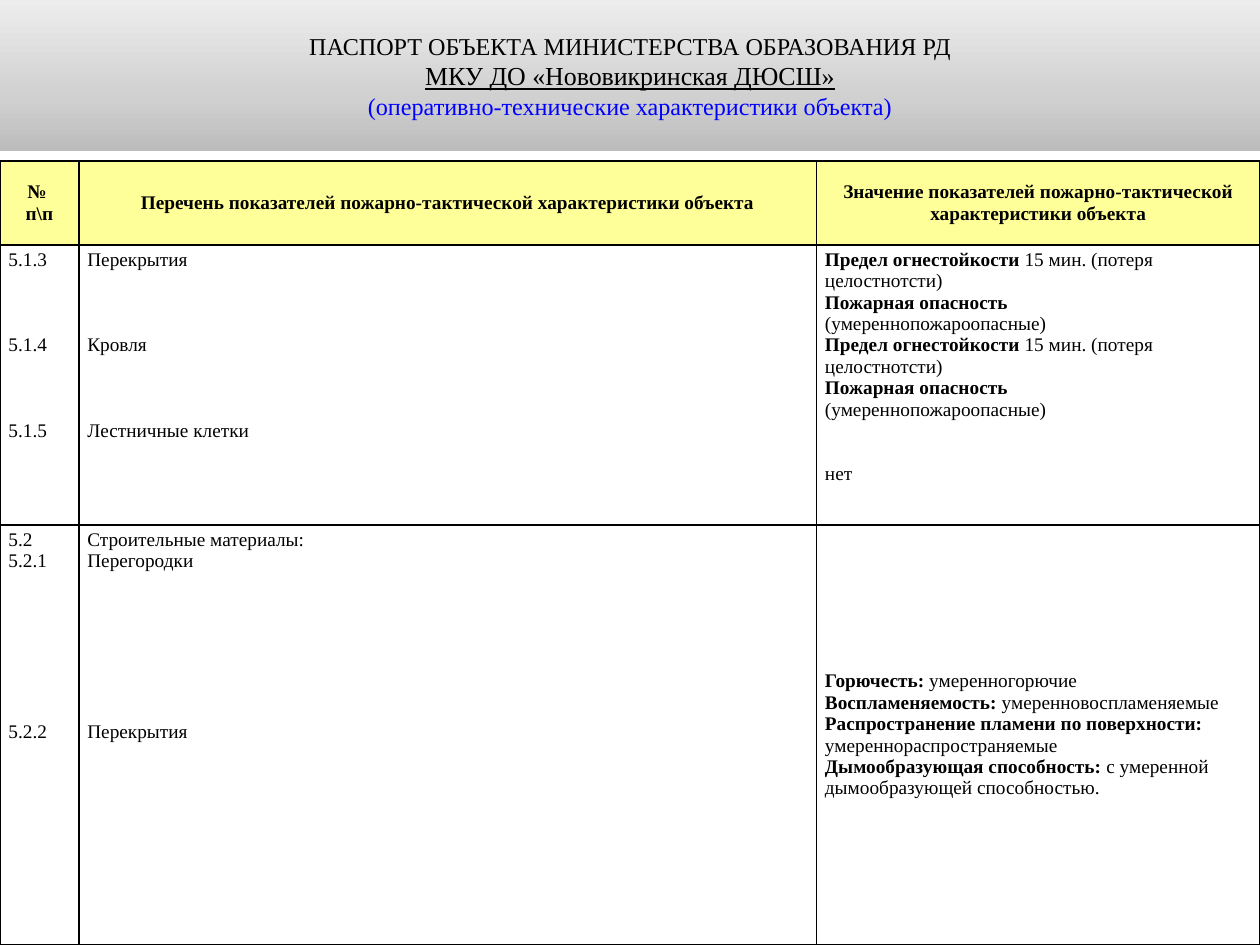
"""Build the fire-safety passport slide with its table of building elements."""
from copy import deepcopy

from lxml import etree
from pptx import Presentation, util as u
from pptx.dml.color import RGBColor
from pptx.enum import shapes, text
from pptx.oxml import ns

FONT = "Times New Roman"
LINE_HEIGHT = 12.2
TITLE = [
    ("ПАСПОРТ ОБЪЕКТА МИНИСТЕРСТВА ОБРАЗОВАНИЯ РД", 13.8, "000000", False),
    ("МКУ ДО «Нововикринская ДЮСШ»", 14.8, "000000", True),
    ("(оперативно-технические характеристики объекта)", 13.8, "0000FF", False),
]
GRADIENT = [(0, "BCBCBC"), (0.35, "D0D0D0"), (1, "EDEDED")]

# Each cell is a list of (lines skipped above, bold text, regular text).
HEADER = [
    [(0, "№ ", ""), (0, "п\\п", "")],
    [(0, "Перечень показателей пожарно-тактической характеристики объекта", "")],
    [(0, "Значение показателей пожарно-тактической характеристики объекта", "")],
]
FIRE_RATING = [
    (0, "Предел огнестойкости ", "15 мин. (потеря целостнотсти)"),
    (0, "Пожарная опасность", ""),
    (0, "", "(умереннопожароопасные)"),
]
STRUCTURES = [
    [(0, "", "5.1.3"), (3, "", "5.1.4"), (3, "", "5.1.5")],
    [(0, "", "Перекрытия"), (3, "", "Кровля"), (3, "", "Лестничные клетки")],
    FIRE_RATING * 2 + [(2, "", "нет")],
]
MATERIALS = [
    [(0, "", "5.2"), (0, "", "5.2.1"), (7, "", "5.2.2")],
    [(0, "", "Строительные материалы:"), (0, "", "Перегородки"), (7, "", "Перекрытия")],
    [
        (0, "Горючесть: ", "умеренногорючие"),
        (0, "Воспламеняемость: ", "умеренновоспламеняемые"),
        (0, "Распространение пламени по поверхности:", ""),
        (0, "", "умереннораспространяемые"),
        (0, "Дымообразующая способность: ", "с умеренной дымообразующей способностью."),
    ],
]
ROWS = [HEADER, STRUCTURES, MATERIALS]
COLUMN_WIDTHS = [1.59, 14.87, 8.94]
ROW_HEIGHTS = [1.69, 5.64, 8.47]
MIDDLE_CELLS = {(0, 0), (0, 1), (0, 2), (2, 2)}


def color(value):
    return RGBColor.from_string(value)


def add_run(paragraph, words, size, value="000000", bold=False, underline=False):
    run = paragraph.add_run()
    run.text = words
    font = run.font
    font.name, font.size, font.bold, font.underline = FONT, u.Pt(size), bold, underline
    font.color.rgb = color(value)


def get_paragraph(frame, index):
    return frame.add_paragraph() if index else frame.paragraphs[0]


def set_margins(box, side, end):
    box.margin_left = box.margin_right = u.Cm(side)
    box.margin_top = box.margin_bottom = u.Cm(end)


def add_borders(cell):
    properties = cell._tc.get_or_add_tcPr()
    for side in ("lnL", "lnR", "lnT", "lnB"):
        line = etree.SubElement(properties, ns.qn("a:" + side), w=str(u.Pt(1)))
        fill = etree.SubElement(line, ns.qn("a:solidFill"))
        etree.SubElement(fill, ns.qn("a:srgbClr"), val="000000")


def fill_cell(cell, content, is_header, is_middle):
    add_borders(cell)
    cell.fill.solid()
    cell.fill.fore_color.rgb = color("FFFF99" if is_header else "FFFFFF")
    set_margins(cell, 0.17, 0.08)
    cell.vertical_anchor = text.MSO_ANCHOR.MIDDLE if is_middle else text.MSO_ANCHOR.TOP
    for index, (skipped, bold_words, words) in enumerate(content):
        paragraph = get_paragraph(cell.text_frame, index)
        paragraph.alignment = text.PP_ALIGN.CENTER if is_header else text.PP_ALIGN.LEFT
        paragraph.space_before = u.Pt(skipped * LINE_HEIGHT)
        if bold_words:
            add_run(paragraph, bold_words, 11, bold=True)
        if words:
            add_run(paragraph, words, 11)


def add_passport_table(slide):
    table = slide.shapes.add_table(
        len(ROWS), len(COLUMN_WIDTHS), 0, u.Cm(3.25),
        u.Cm(sum(COLUMN_WIDTHS)), u.Cm(sum(ROW_HEIGHTS))).table
    table.first_row = table.horz_banding = False
    for column, width in zip(table.columns, COLUMN_WIDTHS):
        column.width = u.Cm(width)
    for row_index, (contents, height) in enumerate(zip(ROWS, ROW_HEIGHTS)):
        table.rows[row_index].height = u.Cm(height)
        for column_index, content in enumerate(contents):
            fill_cell(table.cell(row_index, column_index), content,
                      row_index == 0, (row_index, column_index) in MIDDLE_CELLS)


def add_title_band(slide):
    band = slide.shapes.add_shape(shapes.MSO_SHAPE.RECTANGLE, 0, 0, u.Cm(25.4), u.Cm(3.05))
    band.shadow.inherit = False
    band.line.fill.background()
    band.fill.gradient()
    band.fill.gradient_angle = 90
    first_stop = band._element.spPr.find(".//" + ns.qn("a:gs"))
    first_stop.addnext(deepcopy(first_stop))
    for stop, (position, value) in zip(band.fill.gradient_stops, GRADIENT):
        stop.position = position
        stop.color.rgb = color(value)
    frame = band.text_frame
    frame.word_wrap = True
    frame.vertical_anchor = text.MSO_ANCHOR.MIDDLE
    set_margins(frame, 0.2, 0.1)
    for index, (words, size, value, underline) in enumerate(TITLE):
        paragraph = get_paragraph(frame, index)
        paragraph.alignment = text.PP_ALIGN.CENTER
        add_run(paragraph, words, size, value, underline=underline)


def main():
    presentation = Presentation()
    presentation.slide_width, presentation.slide_height = u.Cm(25.4), u.Cm(19.05)
    slide = presentation.slides.add_slide(presentation.slide_layouts[6])
    add_passport_table(slide)
    add_title_band(slide)
    presentation.save("out.pptx")


if __name__ == "__main__":
    main()
